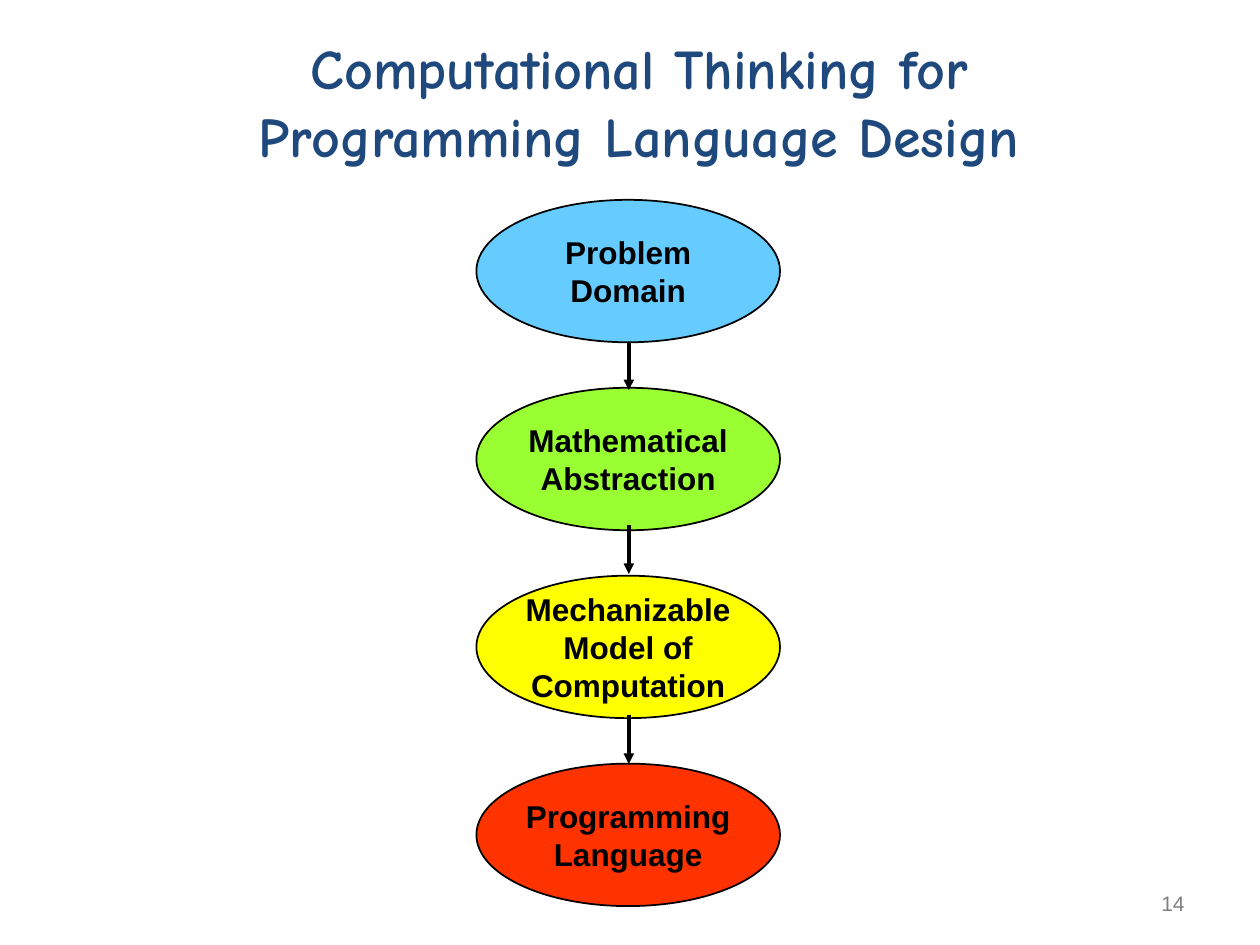
from dataclasses import dataclass

from lxml import etree
from pptx import Presentation
from pptx.dml.color import RGBColor
from pptx.enum.shapes import MSO_CONNECTOR, MSO_SHAPE
from pptx.enum.text import MSO_ANCHOR, PP_ALIGN
from pptx.oxml.ns import qn
from pptx.shapes.base import BaseShape
from pptx.slide import Slide
from pptx.util import Pt

OVAL = MSO_SHAPE.OVAL
STRAIGHT = MSO_CONNECTOR.STRAIGHT
CENTER, RIGHT = PP_ALIGN.CENTER, PP_ALIGN.RIGHT
TOP, MIDDLE = MSO_ANCHOR.TOP, MSO_ANCHOR.MIDDLE


@dataclass(frozen=True)
class Theme:
    title_color: str = "1F497D"
    ink: str = "000000"
    muted: str = "808080"
    problem: str = "66CCFF"
    abstraction: str = "99FF33"
    model: str = "FFFF00"
    language: str = "FF3300"
    title_font: str = "Comic Neue"
    body_font: str = "Arial"
    title_size: float = 32
    stage_size: float = 18
    number_size: float = 12
    outline: float = 1
    arrow: float = 2


@dataclass(frozen=True)
class Stage:
    text: str
    fill: str


THEME = Theme()
STAGES = [
    Stage("Problem\nDomain", THEME.problem),
    Stage("Mathematical\nAbstraction", THEME.abstraction),
    Stage("Mechanizable\nModel of\nComputation", THEME.model),
    Stage("Programming\nLanguage", THEME.language),
]
STAGE_LEFT, STAGE_TOP = 272.2, 114.2
STAGE_WIDTH, STAGE_HEIGHT, STAGE_STEP = 173.5, 81.4, 107.4
ARROW_X, ARROW_LENGTH = 359.3, 27.8
ARROW_TOPS = [195.2, 300.2, 408.8]


def write_text(shape: BaseShape, text: str, *, size: float, color: str,
               font: str = THEME.body_font, bold: bool = False,
               align: PP_ALIGN = CENTER, anchor: MSO_ANCHOR = TOP,
               wrap: bool = True) -> None:
    frame = shape.text_frame
    frame.word_wrap = wrap
    frame.vertical_anchor = anchor
    frame.text = text
    for paragraph in frame.paragraphs:
        paragraph.alignment = align
        paragraph.font.name = font
        paragraph.font.size = Pt(size)
        paragraph.font.bold = bold
        paragraph.font.color.rgb = RGBColor.from_string(color)


def draw_stage(slide: Slide, stage: Stage, top: float) -> None:
    oval = slide.shapes.add_shape(
        OVAL, Pt(STAGE_LEFT), Pt(top), Pt(STAGE_WIDTH), Pt(STAGE_HEIGHT))
    oval.shadow.inherit = False
    oval.fill.solid()
    oval.fill.fore_color.rgb = RGBColor.from_string(stage.fill)
    oval.line.color.rgb = RGBColor.from_string(THEME.ink)
    oval.line.width = Pt(THEME.outline)
    write_text(oval, stage.text, size=THEME.stage_size, color=THEME.ink,
               bold=True, anchor=MIDDLE, wrap=False)


def draw_arrow(slide: Slide, top: float) -> None:
    arrow = slide.shapes.add_connector(
        STRAIGHT, Pt(ARROW_X), Pt(top), Pt(ARROW_X), Pt(top + ARROW_LENGTH))
    arrow.line.color.rgb = RGBColor.from_string(THEME.ink)
    arrow.line.width = Pt(THEME.arrow)
    etree.SubElement(arrow.line._get_or_add_ln(), qn("a:tailEnd"), type="triangle")
    etree.SubElement(arrow._element.spPr, qn("a:effectLst"))


def main() -> None:
    deck = Presentation()
    deck.slide_width, deck.slide_height = Pt(720), Pt(540)
    slide = deck.slides.add_slide(deck.slide_layouts[6])

    title = slide.shapes.add_textbox(Pt(10.8), Pt(15.8), Pt(709.2), Pt(85))
    write_text(title, "Computational Thinking for\nProgramming Language Design",
               size=THEME.title_size, color=THEME.title_color,
               font=THEME.title_font, bold=True)

    for index, stage in enumerate(STAGES):
        draw_stage(slide, stage, STAGE_TOP + index * STAGE_STEP)
    for top in ARROW_TOPS:
        draw_arrow(slide, top)

    page_number = slide.shapes.add_textbox(Pt(516), Pt(505.5), Pt(168), Pt(28.8))
    write_text(page_number, "14", size=THEME.number_size, color=THEME.muted,
               align=RIGHT)

    deck.save("out.pptx")


if __name__ == "__main__":
    main()
